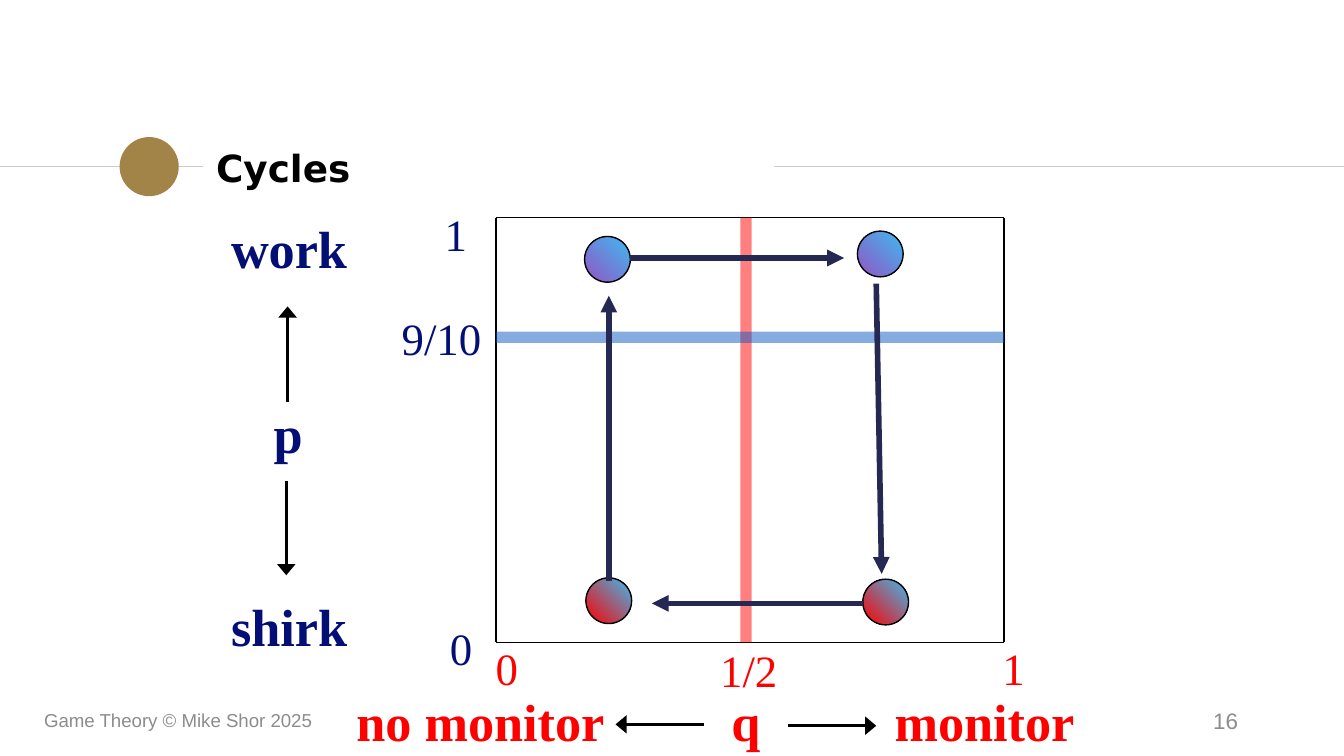
from lxml import etree
from pptx import Presentation
from pptx import util as u
from pptx.dml.color import RGBColor
from pptx.enum import shapes, text
from pptx.oxml.ns import qn

COLORS = {
    "rule": "CCCCCC", "gold": "A28448", "black": "000000", "gray": "8C8C8C",
    "navy": "040F76", "red": "FF0000", "blue": "0E58C4", "arrow": "242852",
    "purple": "9454C3", "sky": "3EBBF0",
}
LEFT, TOP, RIGHT, BOTTOM = 3.69, 1.62, 7.47, 4.78
HALF, NINE_TENTHS = 5.55, 2.51
DOT = 0.34
SERIF = "Times New Roman"

HEADER_RULES = [(0, 1.24, 1.51, 1.24), (5.76, 1.24, 10, 1.24)]
FRAME = [
    (LEFT, TOP, LEFT, BOTTOM), (LEFT, BOTTOM, RIGHT, BOTTOM),
    (LEFT, TOP, RIGHT, TOP), (RIGHT, TOP, RIGHT, BOTTOM),
]
BEST_RESPONSES = [
    ((HALF, TOP, HALF, BOTTOM), "red"),
    ((LEFT, NINE_TENTHS, RIGHT, NINE_TENTHS), "blue"),
]
AXIS_ARROWS = [
    (2.14, 2.99, 2.14, 2.28), (2.13, 3.58, 2.13, 4.28),
    (5.86, 5.4, 6.52, 5.4), (5.24, 5.39, 4.58, 5.39),
]
CYCLE = [
    ((4.35, 1.76), "purple", (4.69, 1.92, 6.28, 1.92)),
    ((6.38, 1.72), "purple", (6.52, 2.11, 6.56, 4.27)),
    ((6.42, 4.31), "red", (6.42, 4.49, 4.85, 4.49)),
    ((4.36, 4.3), "red", (4.53, 4.32, 4.53, 2.2)),
]
STRATEGIES = [
    ("q", (5.25, 5.08, 0.6, 0.57), "red", "CENTER"),
    ("p", (1.91, 2.94, 0.44, 0.5), "navy", "RIGHT"),
    ("shirk", (1.39, 4.37, 1.29, 0.57), "navy", "RIGHT"),
    ("work", (1.23, 1.56, 1.45, 0.57), "navy", "RIGHT"),
    ("no monitor", (2.51, 5.08, 2.13, 0.57), "red", "CENTER"),
    ("monitor", (6.12, 5.08, 2.41, 0.57), "red", "CENTER"),
]
TICKS = [
    ("0", (3.59, 4.72, 0.27, 0.5), "red", "LEFT"),
    ("1", (7.36, 4.72, 0.27, 0.5), "red", "LEFT"),
    ("1/2", (5.26, 4.73, 0.74, 0.5), "red", "LEFT"),
    ("0", (3.25, 4.57, 0.27, 0.41), "navy", "CENTER"),
    ("9/10", (2.87, 2.26, 0.83, 0.5), "navy", "CENTER"),
    ("1", (3.21, 1.49, 0.34, 0.41), "navy", "CENTER"),
]
FOOTERS = [
    ("16", (7.06, 5.21, 2.25, 0.3), 12, "RIGHT"),
    ("Game Theory © Mike Shor 2025", (0.23, 5.21, 3.38, 0.3), 10, "LEFT"),
]


def rgb(name):
    return RGBColor.from_string(COLORS[name])


def add_line(page, ends, color, width, head=None, opacity=None):
    line = page.shapes.add_connector(
        shapes.MSO_CONNECTOR.STRAIGHT, *map(u.Inches, ends))
    line.line.color.rgb = rgb(color)
    line.line.width = u.Pt(width)
    properties = line._element.spPr
    outline = properties.find(qn("a:ln"))
    if head:
        etree.SubElement(outline, qn("a:tailEnd"), type="triangle", w=head)
    if opacity is not None:
        tint = outline.find(".//" + qn("a:srgbClr"))
        etree.SubElement(tint, qn("a:alpha"), val=str(opacity * 1000))
    etree.SubElement(properties, qn("a:effectLst"))


def add_circle(page, left, top, size):
    circle = page.shapes.add_shape(
        shapes.MSO_SHAPE.OVAL, *map(u.Inches, (left, top, size, size)))
    circle.shadow.inherit = False
    return circle


def add_dot(page, corner, color):
    dot = add_circle(page, *corner, DOT)
    dot.fill.gradient()
    dot.fill.gradient_angle = 45
    for stop, name in zip(dot.fill.gradient_stops, (color, "sky")):
        stop.color.rgb = rgb(name)
    dot.line.color.rgb = rgb("black")
    dot.line.width = u.Pt(0.75)


def add_text(page, words, place, color, align, size, font,
             bold=False, middle=False, before=0):
    box = page.shapes.add_textbox(*map(u.Inches, place))
    frame = box.text_frame
    frame.word_wrap = True
    if middle:
        frame.vertical_anchor = text.MSO_ANCHOR.MIDDLE
    para = frame.paragraphs[0]
    para.text = words
    para.alignment = getattr(text.PP_ALIGN, align)
    para.space_before = u.Pt(before)
    para.font.name = font
    para.font.size = u.Pt(size)
    para.font.bold = bold
    para.font.color.rgb = rgb(color)


def main():
    deck = Presentation()
    deck.slide_width = u.Inches(10)
    deck.slide_height = deck.slide_width * 9 // 16
    page = deck.slides.add_slide(deck.slide_layouts[6])

    for ends in HEADER_RULES:
        add_line(page, ends, "rule", 0.75)
    badge = add_circle(page, 0.89, 1.02, 0.44)
    badge.fill.solid()
    badge.fill.fore_color.rgb = rgb("gold")
    badge.line.fill.background()
    add_text(page, "Cycles", (1.51, 1.01, 4.24, 0.48), "black", "LEFT",
             20, "DejaVu Sans", bold=True, middle=True)

    for words, place, color, align in STRATEGIES:
        add_text(page, words, place, color, align, 28, SERIF,
                 bold=True, before=3)
    for ends in FRAME:
        add_line(page, ends, "black", 0.75)
    for ends, color in BEST_RESPONSES:
        add_line(page, ends, color, 6, opacity=50)
    for words, place, color, align in TICKS:
        add_text(page, words, place, color, align, 24, SERIF, before=3)
    for ends in AXIS_ARROWS:
        add_line(page, ends, "black", 1.5, head="lg")
    for corner, color, ends in CYCLE:
        add_dot(page, corner, color)
        add_line(page, ends, "arrow", 3, head="med")
    for words, place, size, align in FOOTERS:
        add_text(page, words, place, "gray", align, size, "Arial", middle=True)

    deck.save("out.pptx")


if __name__ == "__main__":
    main()
